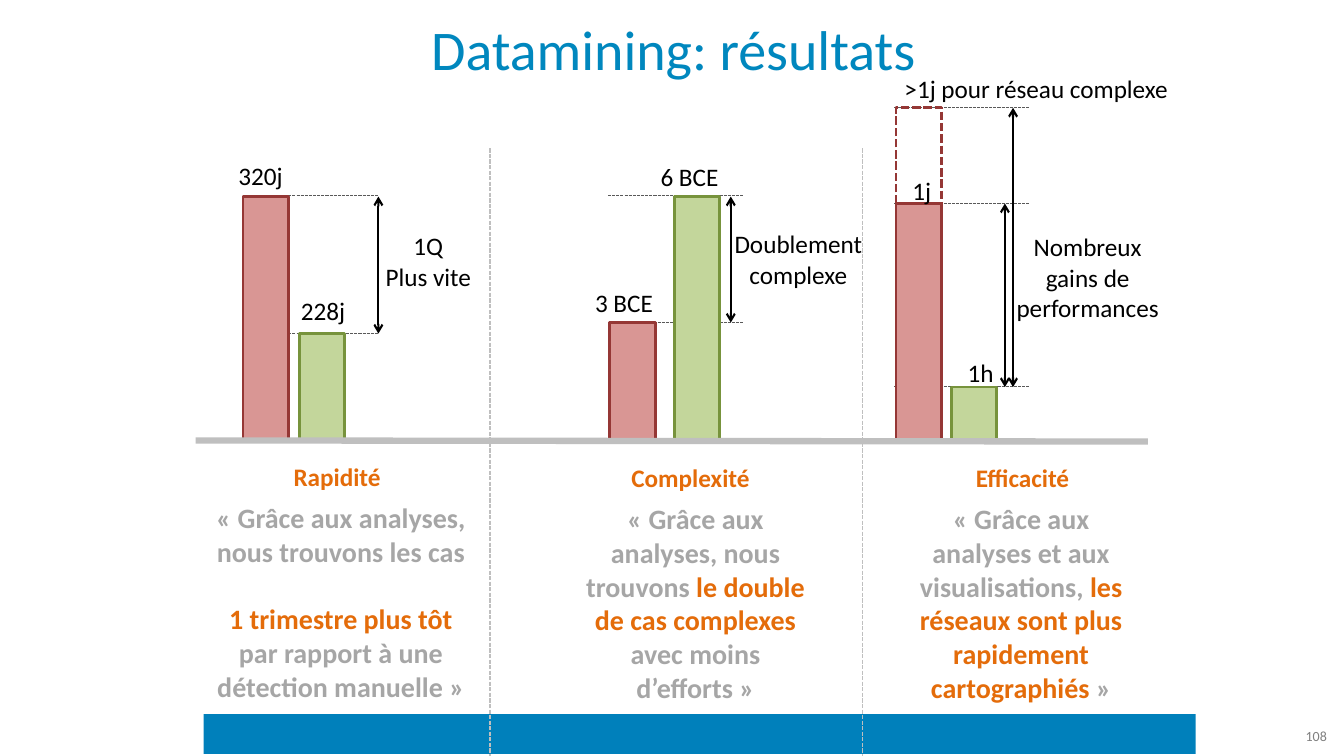
from lxml import etree
from pptx import Presentation
from pptx import util as u
from pptx.dml.color import RGBColor
from pptx.enum import dml, shapes, text
from pptx.oxml.ns import qn

Pt = u.Pt
RED, GREEN = ("D99694", "953735"), ("C3D69B", "77933C")
BLACK, GREY, ORANGE = "000000", "A6A6A6", "E46C0A"
BASE, WIDE = 315, 32.4


def rgb(code):
    return RGBColor.from_string(code)


deck = Presentation()
deck.slide_width, deck.slide_height = Pt(960), Pt(540)
slide = deck.slides.add_slide(deck.slide_layouts[6])
items = slide.shapes


def stroke(x1, y1, x2, y2, color, size, dash=False, arrow=False):
    """Draw a straight line, dashed or with an arrowhead at both ends."""
    line = items.add_connector(shapes.MSO_CONNECTOR.STRAIGHT, Pt(x1), Pt(y1), Pt(x2), Pt(y2))
    line.line.color.rgb = rgb(color)
    line.line.width = Pt(size)
    if dash:
        line.line.dash_style = dml.MSO_LINE.SQUARE_DOT
    if arrow:
        edge = line._element.spPr.find(qn("a:ln"))
        for end in ("a:headEnd", "a:tailEnd"):
            etree.SubElement(edge, qn(end), type="arrow")
    etree.SubElement(line._element.spPr, qn("a:effectLst"))


# Footer band
band = items.add_shape(shapes.MSO_SHAPE.RECTANGLE, Pt(145.5), Pt(510), Pt(708.5), Pt(28.5))
band.shadow.inherit = False
band.fill.solid()
band.fill.fore_color.rgb = rgb("0080BB")
band.line.fill.background()

# Level guides: left, height
for x, y in [(173.5, 139.7), (173.5, 238.3), (434.3, 139.7), (434.3, 230.4),
             (638.8, 77), (638.8, 145.4), (638.8, 275.8)]:
    stroke(x, y, x + 96.5, y, "595959", 0.75, dash=True)

# Bars: left, top, bottom, colours (no fill for the dashed extension)
for x, top, foot, (fill, edge) in [
    (173.5, 140.4, BASE, RED), (213.8, 238.3, BASE, GREEN),
    (435.6, 230.4, BASE, RED), (481.7, 140.4, BASE, GREEN),
    (640, 76.5, 145.4, (None, RED[1])),
    (640, 145.4, BASE, RED), (679.7, 276.5, BASE, GREEN),
]:
    bar = items.add_shape(shapes.MSO_SHAPE.RECTANGLE, Pt(x), Pt(top), Pt(WIDE), Pt(foot - top))
    bar.shadow.inherit = False
    bar.line.color.rgb = rgb(edge)
    bar.line.width = Pt(2)
    if fill:
        bar.fill.solid()
        bar.fill.fore_color.rgb = rgb(fill)
    else:
        bar.fill.background()
        bar.line.dash_style = dml.MSO_LINE.SQUARE_DOT

# Gap arrows, column separators and base line
for x, top, foot in [(270.3, 140.4, 238.3), (522, 140.4, 230.4),
                     (717.8, 145.4, 276.5), (723.6, 77, 276.5)]:
    stroke(x, top, x, foot, BLACK, 1.5, arrow=True)
for x in (350, 616.3):
    stroke(x, 106, x, 540, "BFBFBF", 1, dash=True)
stroke(139.7, 314.6, 820, 315.4, "BFBFBF", 4.5)

# Text styles
PLAIN = dict(size=18, bold=False, wrap=False, mid=False, align="CENTER")
styles = {
    "title": PLAIN | dict(size=40, wrap=True, mid=True),
    "label": PLAIN,
    "note": PLAIN | dict(wrap=True),
    "head": PLAIN | dict(bold=True),
    "quote": PLAIN | dict(size=20, bold=True, wrap=True),
    "page": PLAIN | dict(size=10, wrap=True, mid=True, align="RIGHT"),
}

# Texts: style, left, top, width, height, paragraphs of (words, colour) runs
words = [
    ("title", 157, -2, 648, 72.5, [[("Datamining: résultats", "0087BE")]]),
    ("page", 876.3, 511.2, 78.5, 28.8, [[("108", "808080")]]),
    ("note", 515.5, 159.8, 109.5, 51, [[("Doublement", BLACK)], [("complexe", BLACK)]]),
    ("note", 716.4, 162, 121, 72.7, [[("Nombreux gains de performances", BLACK)]]),
    ("label", 267.8, 161.3, 76.3, 51, [[("1Q", BLACK)], [("Plus vite", BLACK)]]),
    ("quote", 147, 354.3, 193, 128, [
        [("«\u00a0Grâce aux analyses, nous trouvons les cas", GREY)],
        [("1 trimestre plus tôt ", ORANGE),
         ("par rapport à une détection manuelle\u00a0»", GREY)]]),
    ("quote", 406, 355, 181.5, 152.6, [
        [("«\u00a0Grâce aux analyses, nous trouvons ", GREY),
         ("le double de cas complexes ", ORANGE),
         ("avec moins d’efforts\u00a0»", GREY)]]),
    ("quote", 638.6, 355, 181.5, 152.6, [
        [("«\u00a0Grâce aux analyses et aux visualisations, ", GREY),
         ("les réseaux sont plus rapidement cartographiés", ORANGE),
         ("\u00a0»", GREY)]]),
]
for name, x, y, w in [("Rapidité", 202.3, 326.2, 77), ("Complexité", 443.5, 327, 99.4),
                      ("Efficacité", 689, 327, 82.8)]:
    words.append(("head", x, y, w, 28.8, [[(name, ORANGE)]]))
for name, x, y, w in [
    ("320j", 162.7, 111, 46.8), ("228j", 207.4, 207.4, 46.8),
    ("3 BCE", 417.6, 201.6, 56.2), ("6 BCE", 464.4, 111.6, 56.2),
    ("1j", 644.4, 121.7, 28), ("1h", 684, 252, 33),
    (">1j pour réseau complexe", 635.4, 49, 209.5),
]:
    words.append(("label", x, y, w, 28.8, [[(name, BLACK)]]))

for kind, x, y, w, h, paras in words:
    style = styles[kind]
    frame = items.add_textbox(Pt(x), Pt(y), Pt(w), Pt(h)).text_frame
    frame.word_wrap = style["wrap"]
    if style["mid"]:
        frame.vertical_anchor = text.MSO_ANCHOR.MIDDLE
    else:
        frame.auto_size = text.MSO_AUTO_SIZE.SHAPE_TO_FIT_TEXT
    for i, runs in enumerate(paras):
        para = frame.add_paragraph() if i else frame.paragraphs[0]
        para.alignment = text.PP_ALIGN[style["align"]]
        if i and kind == "quote":
            para.space_before = Pt(24)
        for part, color in runs:
            run = para.add_run()
            run.text = part
            font = {"name": "Calibri", "size": Pt(style["size"]), "bold": style["bold"]}
            for key, value in font.items():
                setattr(run.font, key, value)
            run.font.color.rgb = rgb(color)

deck.save("out.pptx")
